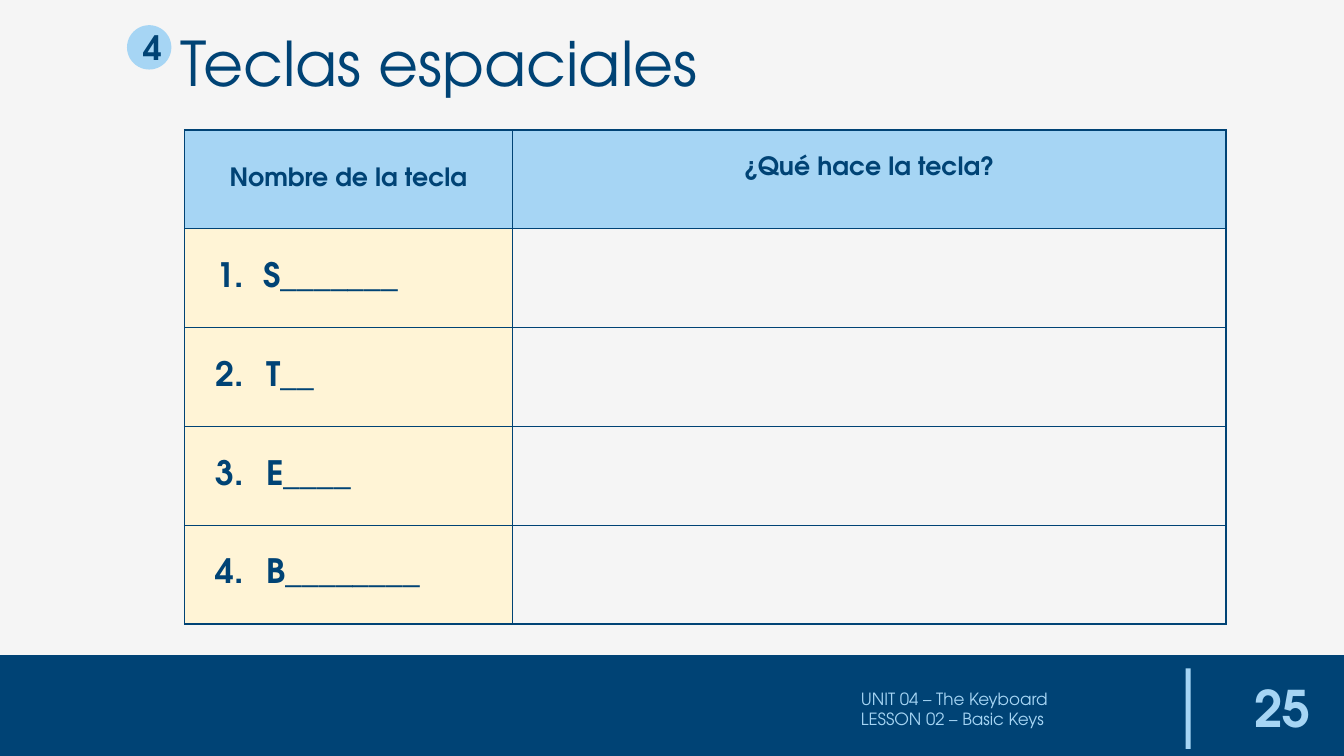
from lxml import etree
from pptx import Presentation
from pptx.dml.color import RGBColor
from pptx.enum import shapes, text
from pptx.oxml import ns
from pptx.util import Inches, Pt

FONT = "TeX Gyre Adventor"
COLORS = {"paper": "F5F5F5", "navy": "004375", "sky": "A6D5F4", "cream": "FFF4D6"}

TITLE = "Teclas espaciales"
SECTION = "4"
HEADERS = ["Nombre de la tecla", "¿Qué hace la tecla?"]
KEYS = [("S", "_______"), ("T", "__"), ("E", "____"), ("B", "________")]
FOOTER = ["UNIT 04 – The Keyboard", "LESSON 02 – Basic Keys"]
PAGE_NUMBER = "25"

COLUMN_WIDTHS = [3.25, 7.08]
ROW_HEIGHT = 0.98
ALIGN = text.PP_ALIGN
MIDDLE = text.MSO_ANCHOR.MIDDLE


def color(name):
    return RGBColor.from_string(COLORS[name])


def add_span(para, words, size=18, bold=False, ink="navy"):
    span = para.add_run()
    span.text = words
    span.font.name = FONT
    span.font.size = Pt(size)
    span.font.bold = bold
    span.font.color.rgb = color(ink)


def write(frame, lines, align=ALIGN.LEFT, spacing=None, **style):
    frame.word_wrap = True
    for index, line in enumerate(lines):
        para = frame.add_paragraph() if index else frame.paragraphs[0]
        para.alignment = align
        if spacing:
            para.line_spacing = spacing
        add_span(para, line, **style)


def add_text(page, area, lines, anchor=MIDDLE, **style):
    box = page.shapes.add_textbox(*map(Inches, area))
    box.text_frame.vertical_anchor = anchor
    write(box.text_frame, lines, **style)


def add_block(page, kind, area, fill):
    block = page.shapes.add_shape(kind, *map(Inches, area))
    block.shadow.inherit = False
    block.fill.solid()
    block.fill.fore_color.rgb = color(fill)
    block.line.fill.background()
    return block


def style_cell(cell, fill):
    cell.fill.solid()
    cell.fill.fore_color.rgb = color(fill)
    cell.vertical_anchor = MIDDLE
    properties = cell._tc.get_or_add_tcPr()
    for index, side in enumerate("LRTB"):
        border = etree.Element(ns.qn(f"a:ln{side}"), w=str(Pt(1)))
        paint = etree.SubElement(border, ns.qn("a:solidFill"))
        etree.SubElement(paint, ns.qn("a:srgbClr"), val=COLORS["navy"])
        properties.insert(index, border)


def number_paragraph(para, number, margin, hanging):
    properties = para._p.get_or_add_pPr()
    properties.set("marL", str(Inches(margin)))
    properties.set("indent", str(-Inches(hanging)))
    tint = etree.SubElement(properties, ns.qn("a:buClr"))
    etree.SubElement(tint, ns.qn("a:srgbClr"), val=COLORS["navy"])
    etree.SubElement(properties, ns.qn("a:buFont"), typeface=FONT)
    etree.SubElement(properties, ns.qn("a:buAutoNum"), type="arabicPeriod", startAt=str(number))


def add_key_table(page):
    rows = len(KEYS) + 1
    frame = page.shapes.add_table(rows, len(HEADERS), Inches(1.83), Inches(1.29),
                                  Inches(sum(COLUMN_WIDTHS)), Inches(rows * ROW_HEIGHT))
    table = frame.table
    table.first_row = table.horz_banding = False
    for column, width in zip(table.columns, COLUMN_WIDTHS):
        column.width = Inches(width)
    for row in table.rows:
        row.height = Inches(ROW_HEIGHT)
    for index, header in enumerate(HEADERS):
        cell = table.cell(0, index)
        style_cell(cell, "sky")
        write(cell.text_frame, [header], align=ALIGN.CENTER, bold=True)
    table.cell(0, 1).margin_bottom = Inches(0.27)
    for number, (letter, blank) in enumerate(KEYS, 1):
        cell = table.cell(number, 0)
        style_cell(cell, "cream")
        style_cell(table.cell(number, 1), "paper")
        para = cell.text_frame.paragraphs[0]
        margin, hanging = (0.68, 0.46) if number == 1 else (0.71, 0.5)
        number_paragraph(para, number, margin, hanging)
        add_span(para, letter, size=24, bold=True)
        add_span(para, blank, size=24)


def main():
    deck = Presentation()
    deck.slide_width, deck.slide_height = Inches(13.33), Inches(7.5)
    page = deck.slides.add_slide(deck.slide_layouts[6])
    page.background.fill.solid()
    page.background.fill.fore_color.rgb = color("paper")

    kinds = shapes.MSO_SHAPE
    add_block(page, kinds.RECTANGLE, (0, 6.5, 13.33, 1), "navy")
    add_block(page, kinds.RECTANGLE, (11.76, 6.63, 0.05, 0.8), "sky")
    add_text(page, (8.44, 6.7, 3.19, 0.66), FOOTER, size=12, ink="sky")
    add_text(page, (11.91, 6.69, 1.19, 0.66), [PAGE_NUMBER],
             align=ALIGN.RIGHT, size=36, bold=True, ink="sky")

    badge = add_block(page, kinds.ROUNDED_RECTANGLE, (1.26, 0.25, 0.44, 0.44), "sky")
    badge.adjustments[0] = 0.5
    badge.text_frame.vertical_anchor = MIDDLE
    write(badge.text_frame, [SECTION], align=ALIGN.CENTER, size=24, bold=True)

    add_key_table(page)
    add_text(page, (1.69, 0.28, 5.67, 1.01), [TITLE], anchor=text.MSO_ANCHOR.TOP,
             spacing=0.9, size=44)
    deck.save("out.pptx")


if __name__ == "__main__":
    main()
